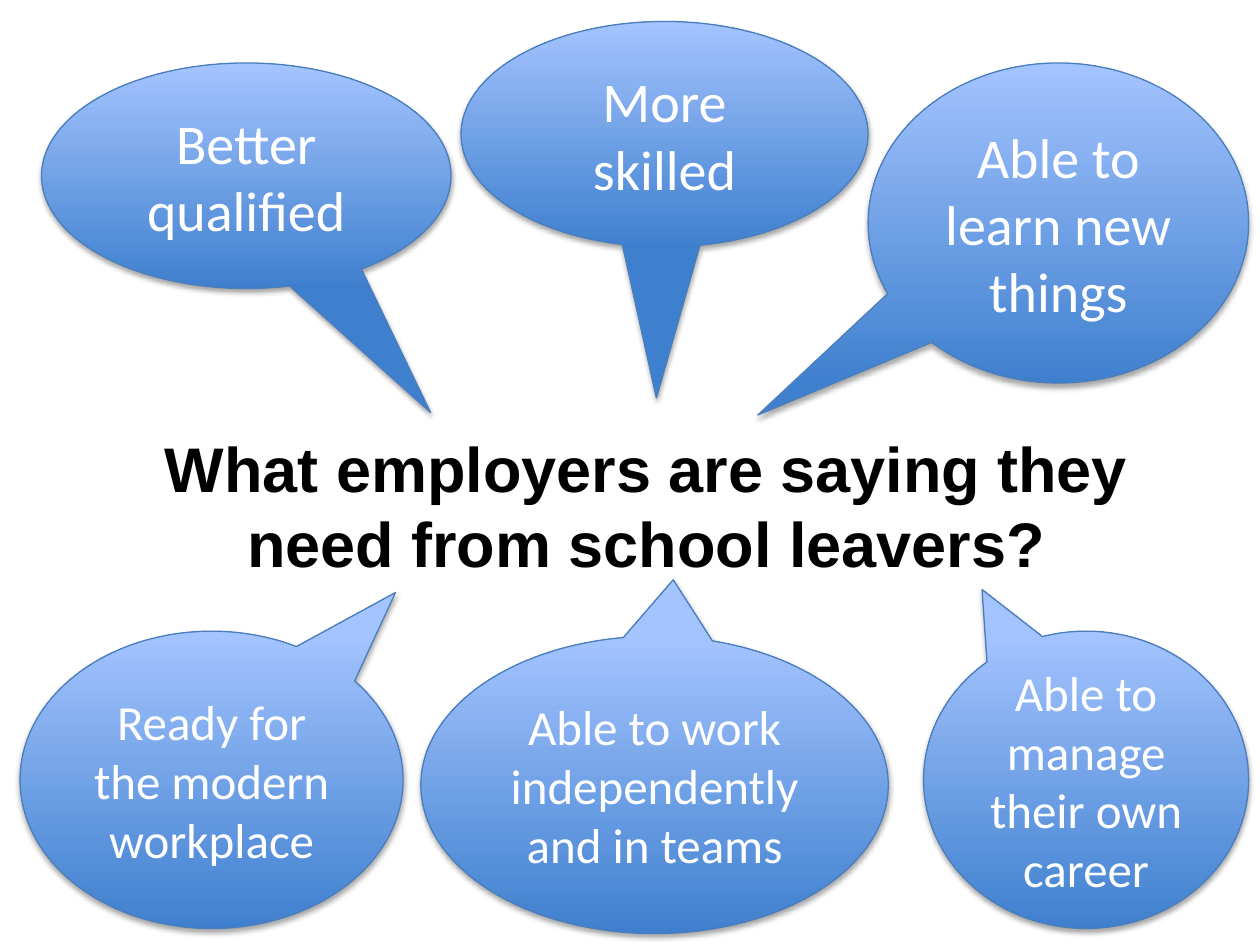
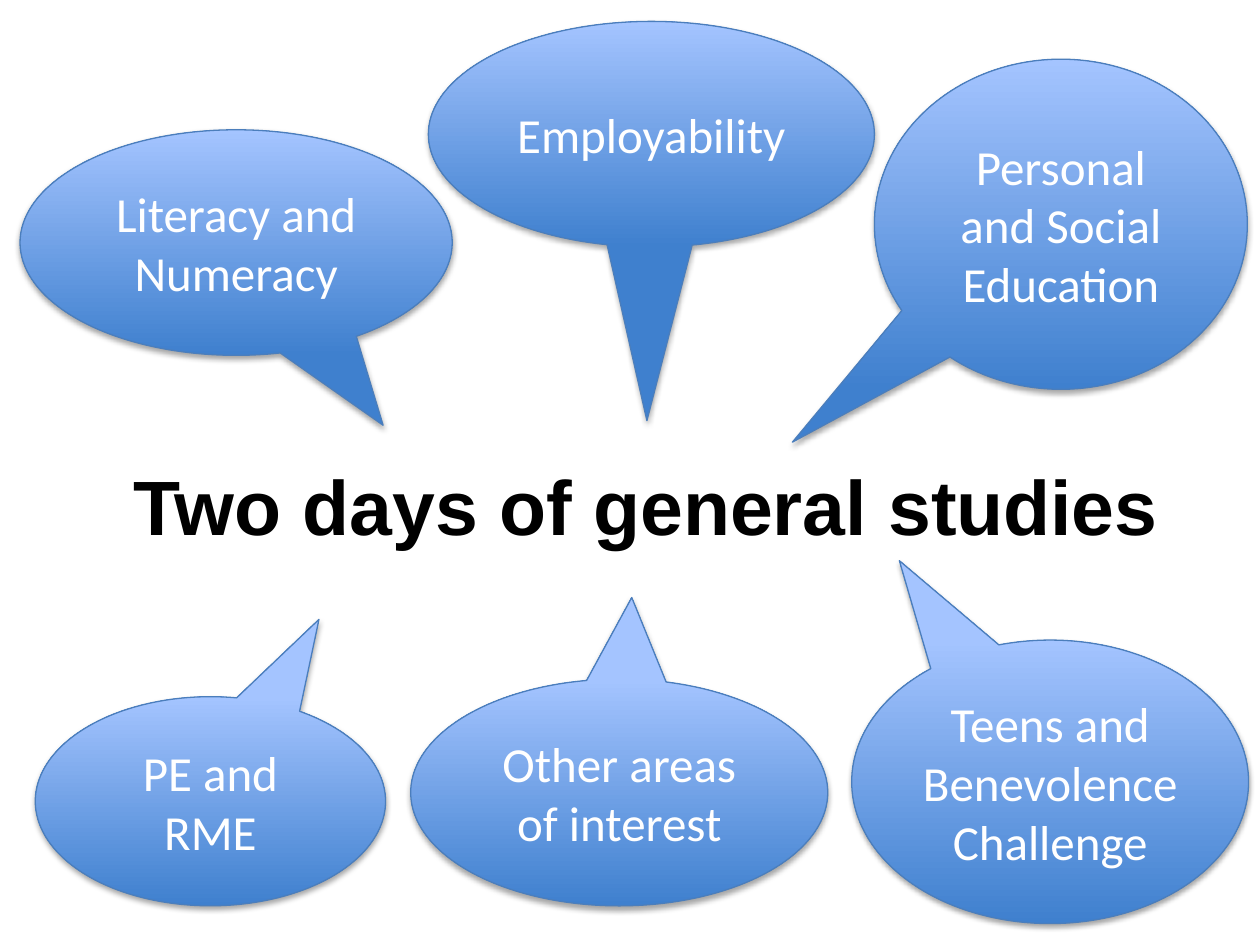
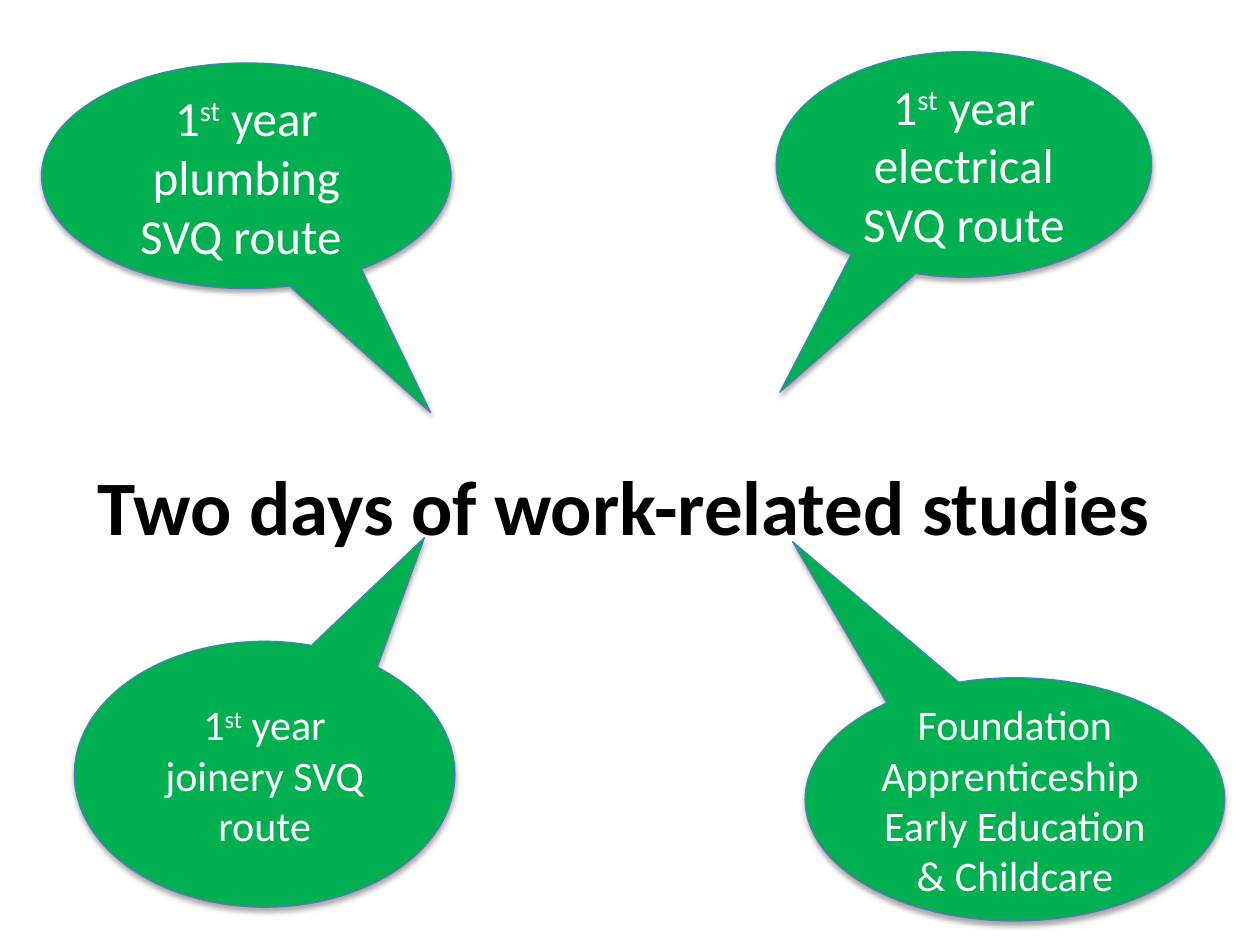
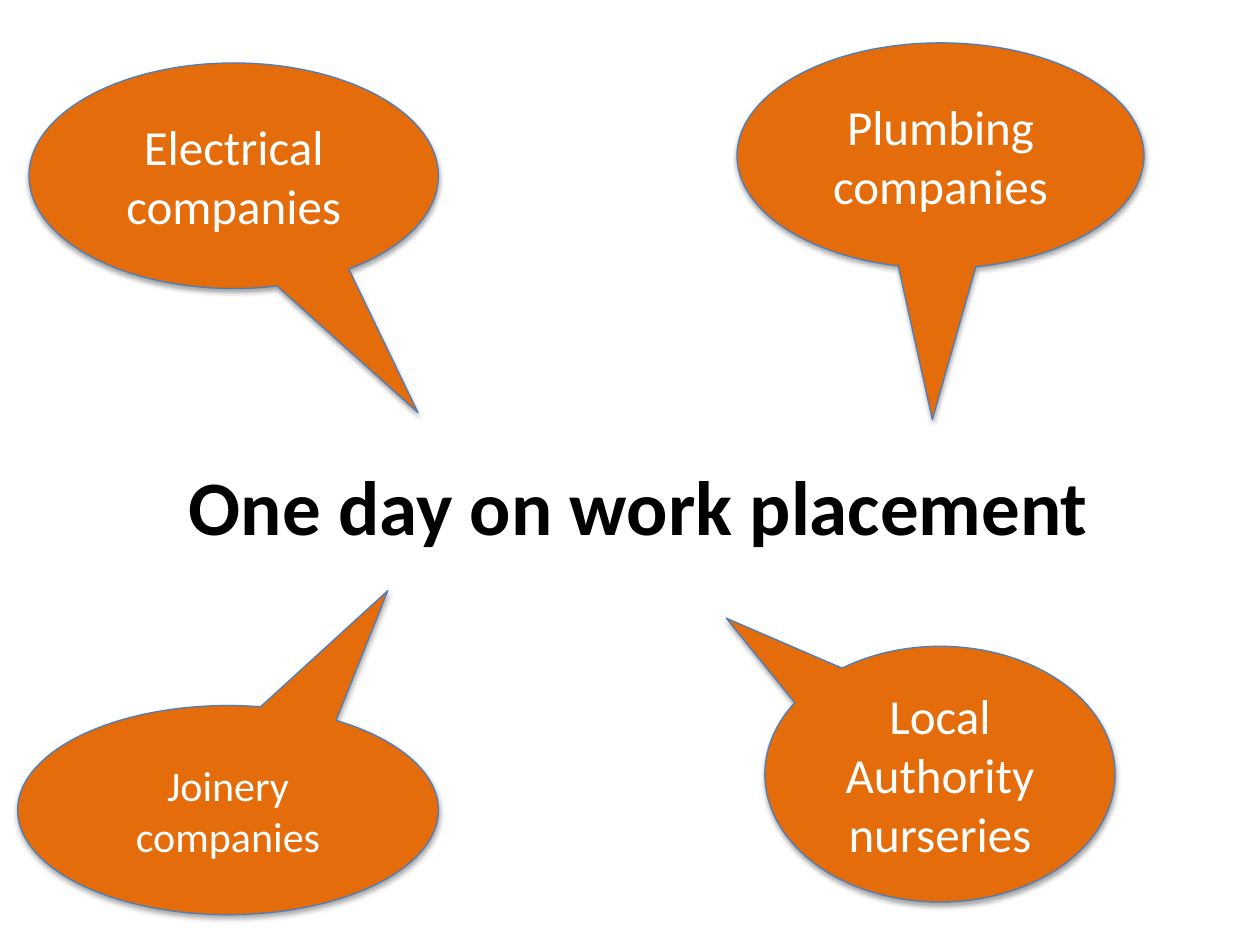
from lxml import etree
from pptx import Presentation
from pptx.dml.color import RGBColor
from pptx.enum.shapes import MSO_SHAPE
from pptx.enum.text import MSO_ANCHOR, PP_ALIGN
from pptx.oxml.ns import qn
from pptx.util import Inches, Pt

CALLOUT = MSO_SHAPE.OVAL_CALLOUT
MIDDLE = MSO_ANCHOR.MIDDLE
CENTER = PP_ALIGN.CENTER

# The slide is a grid of 100 columns by 75 rows
CELL = Inches(0.1)
COLS, ROWS = 100, 75

BLUE = ("3F80CE", "A4C4FF")  # bottom, top
GREEN = "00B050"
ORANGE = "E46C0A"
EDGE = "4B7EBC"
WHITE, BLACK = "FFFFFF", "000000"
BODY = "Calibri"

TITLE_TOP, TITLE_HIGH = 33.8, 12.5
LOW = 17.9  # height of most upper bubbles
TALL = 23.6  # height of the lower bubbles on the first slide
DROP = (0.45, 1.05)  # tail pointing down to the right
DOWN = (-0.02, 1.17)  # tail pointing straight down

# Bubbles: text, size, box (left, top, width, height), tail tip as shares of
# the bubble's size from its centre. ^ marks the ends of superscript.
TALKS = [
    ("What employers are saying they need from school leavers?",
     36, "Arial", (6.3, 90), BLUE, [
         ("More skilled", 32, (36.6, 1.7, 32.3, LOW), DOWN),
         ("Better qualified", 32, (3.3, 5, 32.5, LOW), DROP),
         ("Able to manage their own career", 28,
          (73.3, 50.1, 25.8, TALL), (-0.32, -0.64)),
         ("Ready for the modern workplace", 28,
          (1.6, 50.1, 30.4, TALL), (0.48, -0.63)),
         ("Able to work independently and in teams", 28,
          (33.4, 50.5, 37.1, TALL), (0.04, -0.69)),
         ("Able to learn new things", 32,
          (68.9, 5, 30.2, 25.4), (-0.79, 0.6)),
     ]),
    ("Two days of general studies", 44, "Arial", (6.3, 90), BLUE, [
        ("Employability", 28, (34, 1.7, 35.4, LOW), (-0.01, 1.27)),
        ("Literacy and Numeracy", 28,
         (1.6, 10.3, 34.3, LOW), (0.34, 0.81)),
        ("Teens and Benevolence Challenge", 28,
         (67.6, 50.8, 31.5, 22.5), (-0.38, -0.78)),
        ("PE and RME", 28, (2.8, 55.3, 27.8, 16.6), (0.31, -0.87)),
        ("Other areas of interest", 28,
         (32.6, 53.9, 33.1, 18), (0.03, -0.86)),
        ("Personal and Social Education", 28,
         (69.4, 4.7, 29.6, 26.2), (-0.72, 0.66)),
    ]),
    ("Two days of work-related studies", 44, BODY, (0, 99.1), GREEN, [
        ("1^st^ year electrical SVQ route", 28,
         (61.6, 4.1, 29.8, LOW), (-0.49, 1.01)),
        ("1^st^ year plumbing SVQ route ", 28, (3.3, 5, 32.5, LOW), DROP),
        ("Foundation Apprenticeship \nEarly Education & Childcare", 24,
         (63.9, 53.8, 33.3, 19.3), (-0.53, -1.06)),
        ("1^st^ year joinery SVQ route", 24,
         (5.9, 50.9, 30.2, 21.1), (0.42, -0.89)),
    ]),
    ("One day on work placement", 44, BODY, (5.7, 90), ORANGE, [
        ("Plumbing companies", 28, (58.5, 3.4, 32.3, LOW), DOWN),
        ("Electrical companies", 28, (2.3, 5, 32.5, LOW), DROP),
        ("Joinery companies", 24, (1.4, 56, 33.4, 16.6), (0.38, -1.05)),
        ("Local Authority nurseries", 28,
         (60.7, 51.3, 27.8, 20.3), (-0.61, -0.61)),
    ]),
]


def rgb(code):
    return RGBColor.from_string(code)


def place(box):
    """Turn a box in grid cells into slide lengths."""
    return [round(part * CELL) for part in box]


def write(shape, text, size, font, color, bold=False):
    """Fill a shape with centred text; ^ switches superscript."""
    frame = shape.text_frame
    frame.word_wrap = True
    frame.vertical_anchor = MIDDLE
    for index, line in enumerate(text.split("\n")):
        para = frame.add_paragraph() if index else frame.paragraphs[0]
        para.alignment = CENTER
        for turn, part in enumerate(line.split("^")):
            run = para.add_run()
            run.text = part
            run.font.size = Pt(size)
            run.font.name = font
            run.font.bold = bold
            run.font.color.rgb = rgb(color)
            if turn % 2:
                run.font._element.set("baseline", "30000")


def paint(shape, fill):
    """Fill with one colour, or shade from a bottom to a top colour."""
    if isinstance(fill, str):
        shape.fill.solid()
        shape.fill.fore_color.rgb = rgb(fill)
    else:
        shape.fill.gradient()
        shape.fill.gradient_angle = 90
        for stop, color in zip(shape.fill.gradient_stops, fill):
            stop.color.rgb = rgb(color)
    shape.line.color.rgb = rgb(EDGE)
    shape.line.width = Pt(0.75)


def shade(shape):
    """Give the shape a soft shadow below it."""
    shape.shadow.inherit = False
    effects = shape.element.spPr.find(qn("a:effectLst"))
    drop = etree.SubElement(
        effects, qn("a:outerShdw"), blurRad=str(Pt(3.1)), dist=str(Pt(1.8)),
        dir="5400000", rotWithShape="0")
    color = etree.SubElement(drop, qn("a:srgbClr"), val=BLACK)
    etree.SubElement(color, qn("a:alpha"), val="35000")


def bubble(slide, fill, text, size, box, tail):
    shape = slide.shapes.add_shape(CALLOUT, *place(box))
    for index, share in enumerate(tail):
        shape.adjustments[index] = share
    paint(shape, fill)
    shade(shape)
    write(shape, text, size, BODY, WHITE)


def talk(slide, title, size, font, span, fill, bubbles):
    """A bold title across the middle with bubbles around it."""
    left, width = span
    head = slide.shapes.add_textbox(
        *place((left, TITLE_TOP, width, TITLE_HIGH)))
    write(head, title, size, font, BLACK, bold=True)
    for item in bubbles:
        bubble(slide, fill, *item)


def main():
    deck = Presentation()
    deck.slide_width, deck.slide_height = COLS * CELL, ROWS * CELL
    for item in TALKS:
        talk(deck.slides.add_slide(deck.slide_layouts[6]), *item)
    deck.save("out.pptx")


if __name__ == "__main__":
    main()
